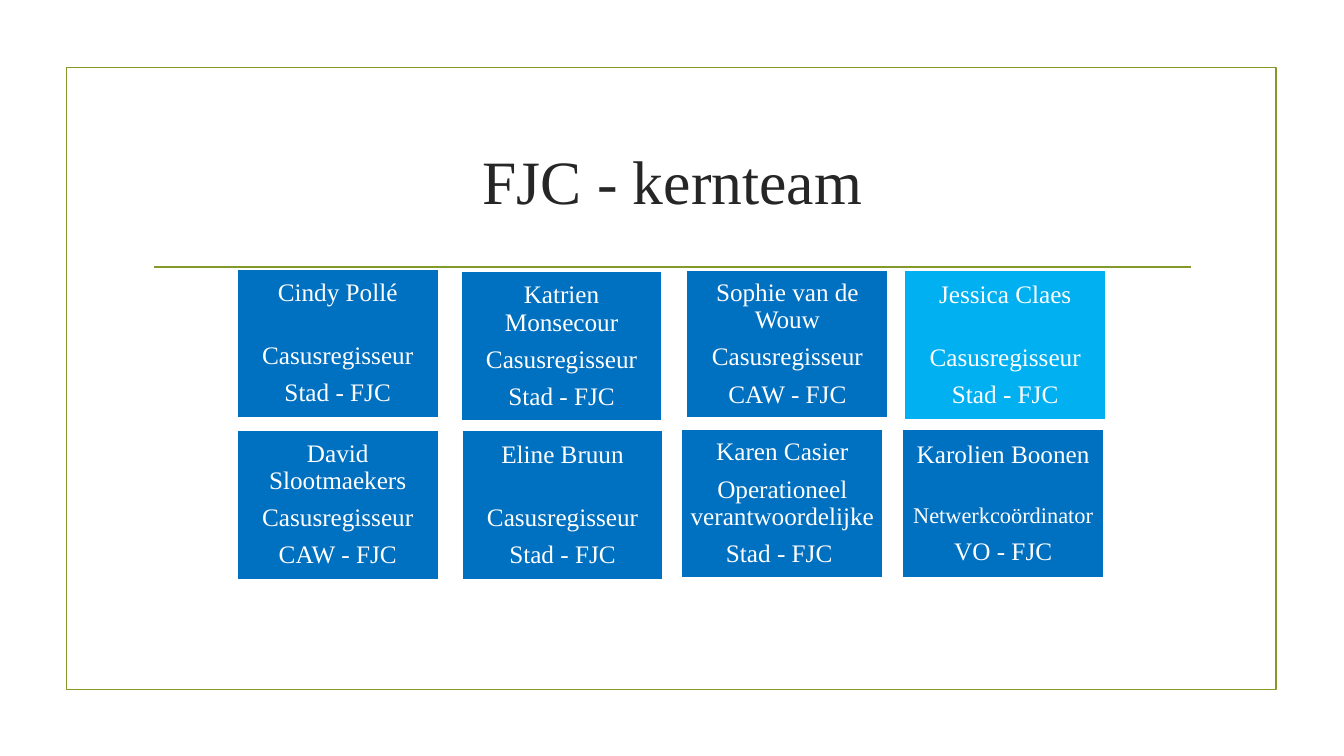
"""Build the FJC core team slide: a framed title above eight staff cards."""
import pptx
import pptx.chart.data
import pptx.dml.color
import pptx.enum.shapes
import pptx.enum.text
import pptx.util
from lxml import etree
from pptx.util import Inches

FONT = "Times New Roman"
GREEN, BLUE, CYAN, WHITE, DARK = "83992A", "0070C0", "00B0F0", "FFFFFF", "262626"
RECTANGLE = pptx.enum.shapes.MSO_SHAPE.RECTANGLE
CARD_WIDTH = 2
LINE_GAP = 18.5


def color(value):
    return pptx.dml.color.RGBColor.from_string(value)


def write(para, text, size=18, ink=WHITE, before=0, after=0, spacing=0.9):
    para.alignment = pptx.enum.text.PP_ALIGN.CENTER
    para.line_spacing = spacing
    para.space_before = pptx.util.Pt(before)
    para.space_after = pptx.util.Pt(after)
    span = para.add_run()
    span.text = text
    span.font.name = FONT
    span.font.size = pptx.util.Pt(size)
    span.font.color.rgb = color(ink)


deck = pptx.Presentation()
deck.slide_width, deck.slide_height = Inches(13.33), Inches(7.5)
page = deck.slides.add_slide(deck.slide_layouts[5])

title = page.shapes.title
title.left, title.top = Inches(1.42), Inches(1.07)
title.width, title.height = Inches(10.5), Inches(1.43)
title.text_frame.vertical_anchor = pptx.enum.text.MSO_ANCHOR.MIDDLE
write(title.text_frame.paragraphs[0], "FJC - kernteam", size=44, ink=DARK, spacing=1.0)

frame = page.shapes.add_shape(RECTANGLE, Inches(0.66), Inches(0.67), Inches(12), Inches(6.17))
frame.shadow.inherit = False
frame.fill.background()

rule = page.shapes.add_connector(
    pptx.enum.shapes.MSO_CONNECTOR.STRAIGHT,
    Inches(1.53), Inches(2.65), Inches(11.81), Inches(2.65))
etree.SubElement(rule.element.spPr, pptx.oxml.ns.qn("a:effectLst"))

for outline in (frame.line, rule.line):
    outline.color.rgb = color(GREEN)
    outline.width = pptx.util.Pt(1.25)

REGISSEUR = "Casusregisseur"
team = [
    (2.35, 2.67, 1.48, BLUE, "Cindy Pollé", REGISSEUR, "Stad - FJC"),
    (4.57, 2.69, 1.49, BLUE, "Katrien Monsecour", REGISSEUR, "Stad - FJC"),
    (6.81, 2.68, 1.47, BLUE, "Sophie van de Wouw", REGISSEUR, "CAW - FJC"),
    (8.97, 2.68, 1.49, CYAN, "Jessica Claes", REGISSEUR, "Stad - FJC"),
    (2.35, 4.27, 1.48, BLUE, "David Slootmaekers", REGISSEUR, "CAW - FJC"),
    (4.58, 4.27, 1.48, BLUE, "Eline Bruun", REGISSEUR, "Stad - FJC"),
    (6.76, 4.26, 1.47, BLUE, "Karen Casier", "Operationeel verantwoordelijke", "Stad - FJC "),
    (8.95, 4.26, 1.47, BLUE, "Karolien Boonen", "Netwerkcoördinator", "VO - FJC"),
]
spaced_names = {"Cindy Pollé", "Jessica Claes", "Eline Bruun", "Karolien Boonen"}

for left, top, height, fill, name, role, employer in team:
    card = page.shapes.add_shape(
        RECTANGLE, Inches(left), Inches(top), Inches(CARD_WIDTH), Inches(height))
    card.shadow.inherit = False
    card.fill.solid()
    card.fill.fore_color.rgb = color(fill)
    card.line.color.rgb = color(WHITE)
    card.line.width = pptx.util.Pt(1.25)

    box = card.text_frame
    box.word_wrap = True
    box.vertical_anchor = pptx.enum.text.MSO_ANCHOR.MIDDLE
    box.margin_left = box.margin_right = box.margin_top = box.margin_bottom = Inches(0.07)
    role_size = 16 if role == "Netwerkcoördinator" else 18
    role_gap = LINE_GAP if name in spaced_names else 0
    write(box.paragraphs[0], name, after=7)
    write(box.add_paragraph(), role, size=role_size, before=role_gap, after=7)
    write(box.add_paragraph(), employer, after=7)

deck.save("out.pptx")
